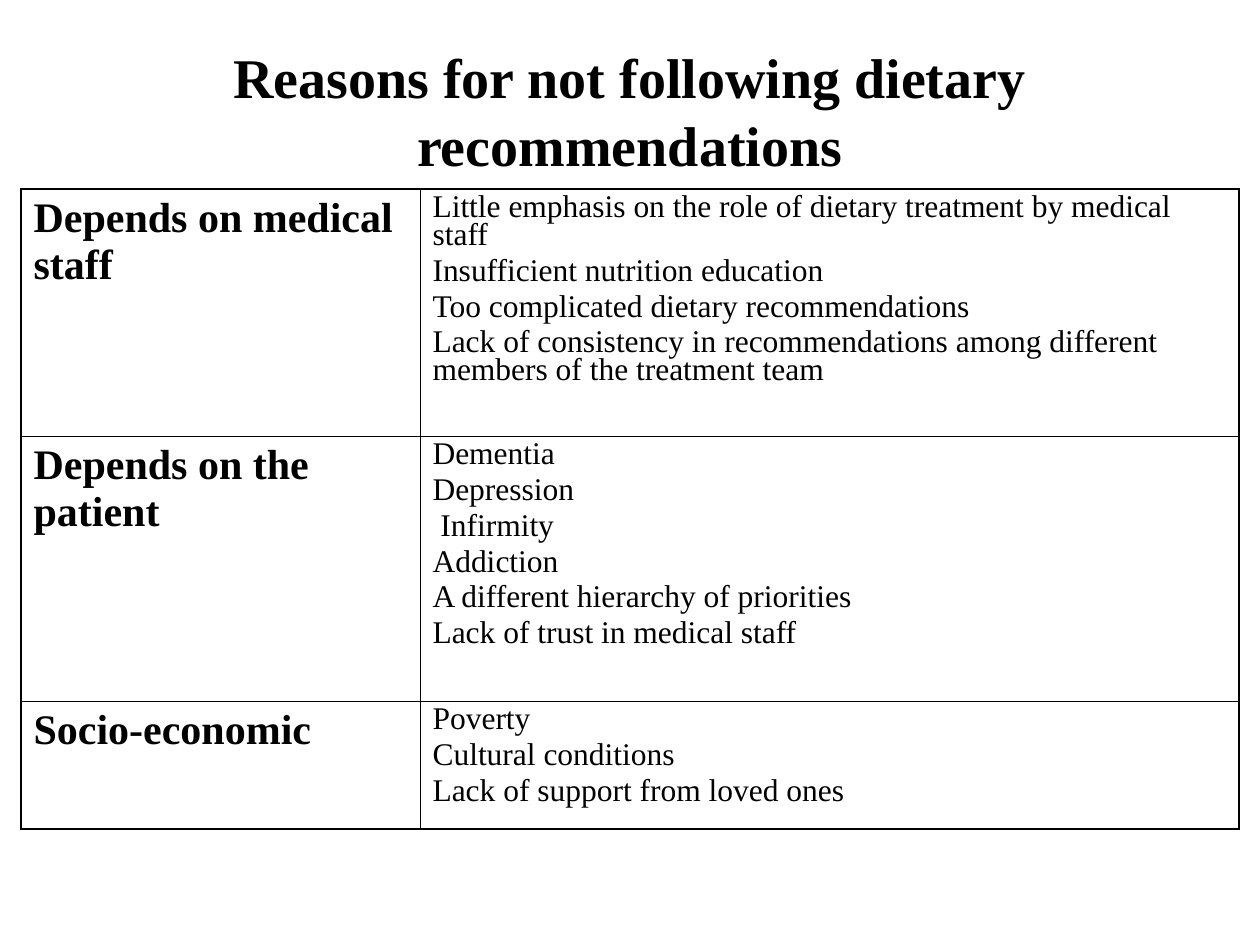
import pptx
import pptx.dml.color
import pptx.enum.text
import pptx.oxml
import pptx.oxml.ns
import pptx.util
from dataclasses import dataclass

Pt = pptx.util.Pt
FONT = "Times New Roman"
COLORS = {"text": "000000", "border": "000000"}
THICK, THIN = 1.08, 0.45


@dataclass
class Reason:
    heading: str
    items: list[str]
    height: float


REASONS = [
    Reason("Depends on medical staff", [
        "Little emphasis on the role of dietary treatment by medical staff",
        "Insufficient nutrition education",
        "Too complicated dietary recommendations",
        "Lack of consistency in recommendations among different members of the treatment team",
    ], 141.3),
    Reason("Depends on the patient", [
        "Dementia",
        "Depression",
        " Infirmity",
        "Addiction",
        "A different hierarchy of priorities",
        "Lack of trust in medical staff",
    ], 151.3),
    Reason("Socio-economic", [
        "Poverty",
        "Cultural conditions",
        "Lack of support from loved ones",
    ], 73.3),
]
COL_WIDTHS = [228, 468]


def style_paragraph(p, size: float, bold: bool) -> None:
    for r in p.runs:
        r.font.name = FONT
        r.font.size = Pt(size)
        r.font.bold = bold
        r.font.color.rgb = pptx.dml.color.RGBColor.from_string(COLORS["text"])


def set_borders(cell, widths: dict[str, float]) -> None:
    """Cell borders come before the fill in the cell properties."""
    props = cell._tc.get_or_add_tcPr()
    for i, (side, width) in enumerate(widths.items()):
        props.insert(i, pptx.oxml.parse_xml(
            f'<a:{side} {pptx.oxml.ns.nsdecls("a")} w="{int(Pt(width))}">'
            f'<a:solidFill><a:srgbClr val="{COLORS["border"]}"/></a:solidFill></a:{side}>'))


def fill_cell(cell, lines: list[str], size: float, bold: bool,
              before: float, spacing: float) -> None:
    cell.fill.background()
    cell.margin_left = cell.margin_right = Pt(7.2)
    cell.margin_top = cell.margin_bottom = Pt(3.6)
    cell.text_frame.text = "\n".join(lines)
    for p in cell.text_frame.paragraphs:
        p.space_before = Pt(before)
        p.line_spacing = spacing
        style_paragraph(p, size, bold)


def add_title(slide, text: str) -> None:
    tf = slide.shapes.add_textbox(Pt(54), Pt(12), Pt(612), Pt(102)).text_frame
    tf.word_wrap = True
    tf.vertical_anchor = pptx.enum.text.MSO_ANCHOR.MIDDLE
    tf.text = text
    p = tf.paragraphs[0]
    p.alignment = pptx.enum.text.PP_ALIGN.CENTER
    style_paragraph(p, 32, True)


def add_reasons(slide, reasons: list[Reason]) -> None:
    table = slide.shapes.add_table(
        len(reasons), len(COL_WIDTHS), Pt(12), Pt(108),
        Pt(sum(COL_WIDTHS)), Pt(sum(reason.height for reason in reasons))).table
    table.first_row = table.horz_banding = False
    for column, width in zip(table.columns, COL_WIDTHS):
        column.width = Pt(width)
    last = len(reasons) - 1
    for i, reason in enumerate(reasons):
        table.rows[i].height = Pt(reason.height)
        heading, items = table.cell(i, 0), table.cell(i, 1)
        fill_cell(heading, [reason.heading], 24, True, 6, 1.0)
        fill_cell(items, reason.items, 18, False, 4.5, 0.8)
        # Thick outer frame, thin inner lines
        top = THICK if i == 0 else THIN
        bottom = THICK if i == last else THIN
        set_borders(heading, {"lnL": THICK, "lnR": THIN, "lnT": top, "lnB": bottom})
        set_borders(items, {"lnL": THIN, "lnR": THICK, "lnT": top, "lnB": bottom})


def main() -> None:
    prs = pptx.Presentation()
    prs.slide_width, prs.slide_height = Pt(720), Pt(540)
    slide = prs.slides.add_slide(prs.slide_layouts[6])
    add_title(slide, "Reasons for not following dietary recommendations")
    add_reasons(slide, REASONS)
    prs.save("out.pptx")


if __name__ == "__main__":
    main()
